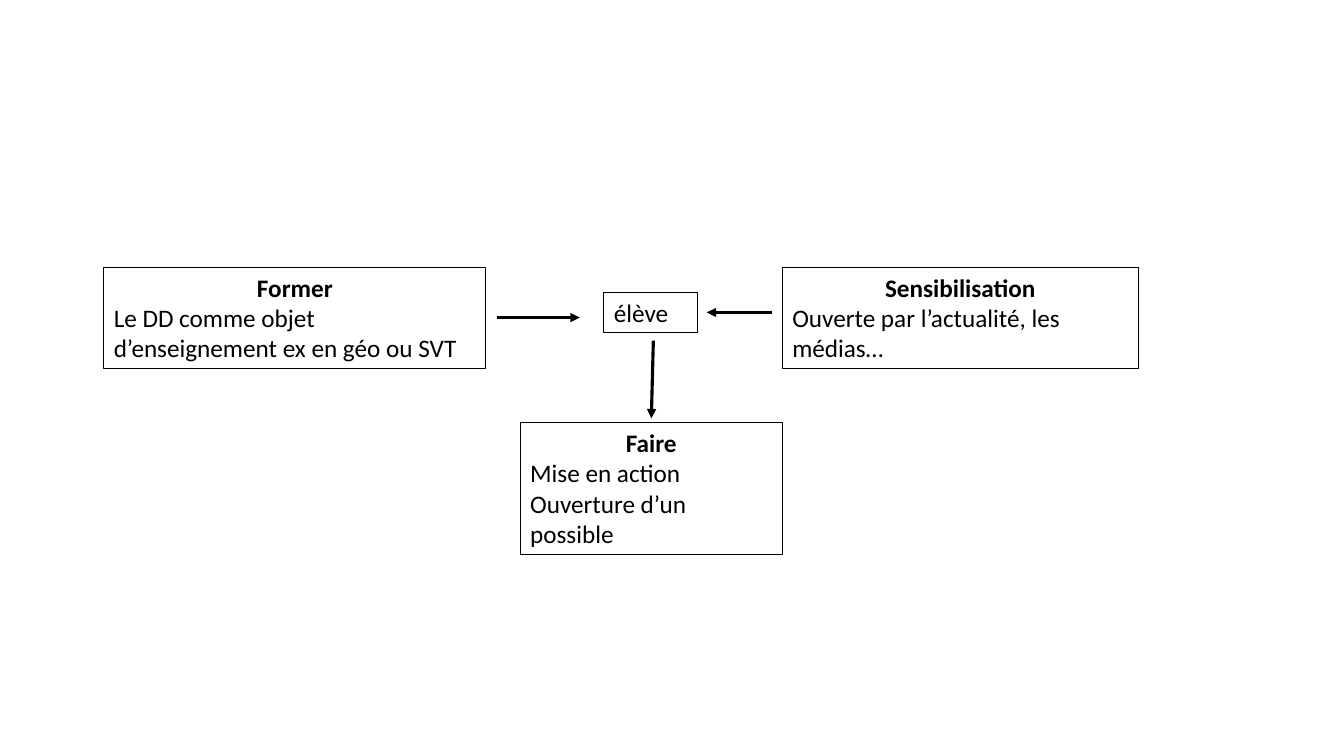
import pptx
import pptx.dml.color
import pptx.enum.shapes
import pptx.enum.text
import pptx.oxml.ns
import pptx.util
from lxml import etree

Inches, Pt = pptx.util.Inches, pptx.util.Pt

THEME = {
    "font": "Calibri",
    "size": 18,
    "ink": pptx.dml.color.RGBColor(0, 0, 0),
    "border": 0.75,
    "arrow": 2.25,
}

# (left, top, width, height), title, lines
BOXES = [
    ((5.99, 2.9, 0.93, 0.4), None, ["élève"]),
    ((1.03, 2.65, 3.79, 1.01), "Former",
     ["Le DD comme objet d’enseignement ex en géo ou SVT"]),
    ((7.76, 2.65, 3.53, 1.01), "Sensibilisation",
     ["Ouverte par l’actualité, les médias…"]),
    ((5.16, 4.19, 2.6, 1.31), "Faire",
     ["Mise en action", "Ouverture d’un possible"]),
]

# start x, start y, end x, end y
ARROWS = [
    (4.93, 3.15, 5.75, 3.15),
    (7.66, 3.1, 7.01, 3.1),
    (6.48, 3.38, 6.46, 4.15),
]


def write(p, text, bold=False, align=pptx.enum.text.PP_ALIGN.LEFT):
    p.alignment = align
    r = p.add_run()
    r.text = text
    r.font.name = THEME["font"]
    r.font.size = Pt(THEME["size"])
    r.font.bold = bold
    r.font.color.rgb = THEME["ink"]


def set_line(s, width):
    s.line.color.rgb = THEME["ink"]
    s.line.width = Pt(width)


def add_box(slide, place, title, lines):
    s = slide.shapes.add_textbox(*map(Inches, place))
    set_line(s, THEME["border"])
    tf = s.text_frame
    tf.word_wrap = True
    tf.auto_size = pptx.enum.text.MSO_AUTO_SIZE.SHAPE_TO_FIT_TEXT
    p = tf.paragraphs[0]
    if title:
        write(p, title, bold=True, align=pptx.enum.text.PP_ALIGN.CENTER)
        p = tf.add_paragraph()
    write(p, lines[0])
    for line in lines[1:]:
        write(tf.add_paragraph(), line)


def add_arrow(slide, ends):
    s = slide.shapes.add_connector(
        pptx.enum.shapes.MSO_CONNECTOR.STRAIGHT, *map(Inches, ends))
    set_line(s, THEME["arrow"])
    qn = pptx.oxml.ns.qn
    etree.SubElement(s.line._get_or_add_ln(), qn("a:tailEnd"), type="triangle")
    etree.SubElement(s._element.spPr, qn("a:effectLst"))


def main():
    prs = pptx.Presentation()
    prs.slide_width, prs.slide_height = Inches(13.33), Inches(7.5)
    slide = prs.slides.add_slide(prs.slide_layouts[6])
    for box in BOXES:
        add_box(slide, *box)
    for ends in ARROWS:
        add_arrow(slide, ends)
    prs.save("out.pptx")


if __name__ == "__main__":
    main()
